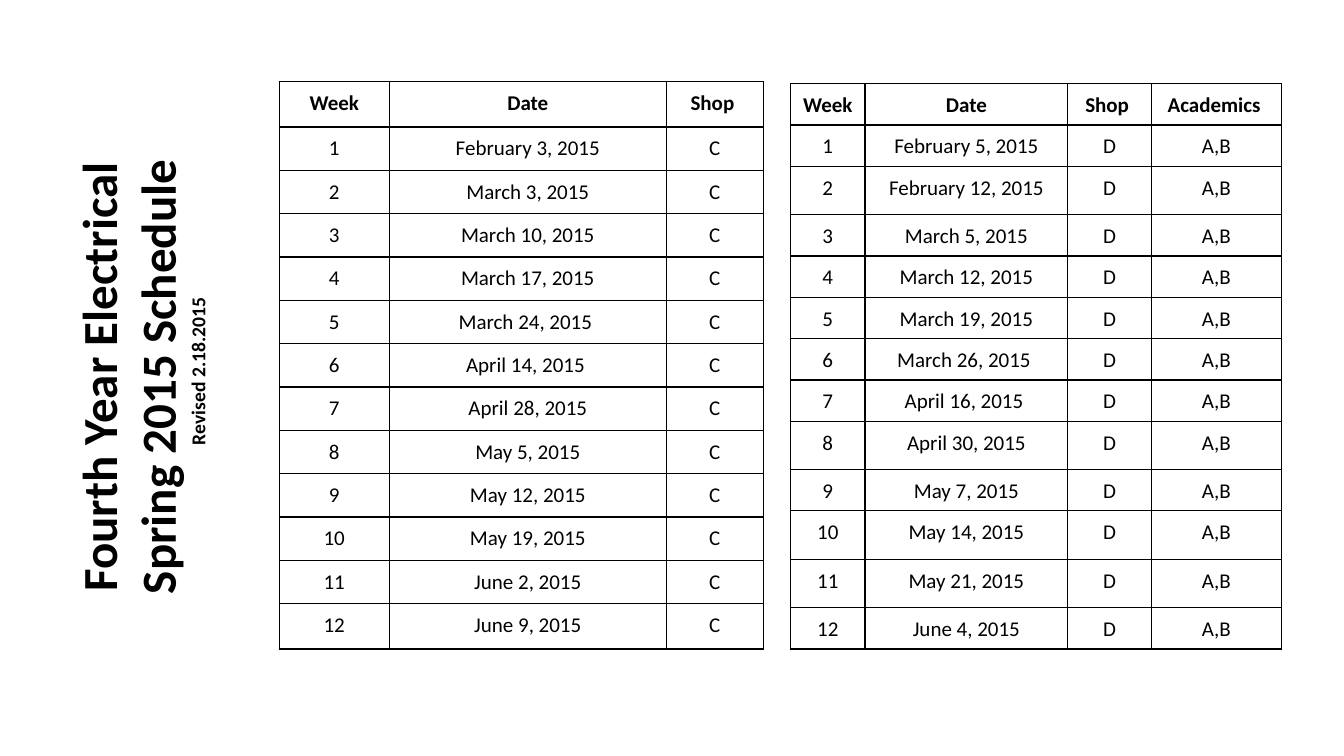
from lxml.etree import SubElement
from pptx import Presentation
from pptx.dml.color import RGBColor
from pptx.enum.text import MSO_AUTO_SIZE, PP_ALIGN
from pptx.oxml.ns import qn
from pptx.util import Inches, Pt

INK = "000000"
SIDES = ("left", "right", "top", "bottom")


def style(run, size, bold):
    form = {"name": "Calibri", "size": Pt(size), "bold": bold}
    for key, value in form.items():
        setattr(run.font, key, value)
    run.font.color.rgb = RGBColor.from_string(INK)


def border(cell):
    props = cell._tc.get_or_add_tcPr()
    for tag in ("a:lnL", "a:lnR", "a:lnT", "a:lnB"):
        line = SubElement(props, qn(tag), w=str(Pt(1)))
        fill = SubElement(line, qn("a:solidFill"))
        SubElement(fill, qn("a:srgbClr"), val=INK)


deck = Presentation()
deck.slide_width, deck.slide_height = Inches(13.33), Inches(7.5)
slide = deck.slides.add_slide(deck.slide_layouts[6])

# Schedules: the columns after the date are the same every week
plans = [
    {
        "at": (2.77, 0.81),
        "heads": ["Week", "Date", "Shop "],
        "cols": [1.09, 2.75, 0.96],
        "rows": [0.45] + [0.43] * 11 + [0.45],
        "dates": ["February 3, 2015", "March 3, 2015", "March 10, 2015",
                  "March 17, 2015", "March 24, 2015 ", "April 14, 2015 ",
                  "April 28, 2015", "May 5, 2015", "May 12, 2015",
                  "May 19, 2015", "June 2, 2015", "June 9, 2015"],
        "rest": ["C"],
    },
    {
        "at": (7.84, 0.83),
        "heads": ["Week", "Date", "Shop ", "Academics "],
        "cols": [0.74, 2.01, 0.83, 1.29],
        "rows": [0.48 if row in (2, 8, 10, 11) else 0.41 for row in range(13)],
        "dates": ["February 5, 2015", "February 12, 2015", "March 5, 2015",
                  "March 12, 2015", "March 19, 2015", "March 26, 2015 ",
                  "April 16, 2015 ", "April 30, 2015", "May 7, 2015",
                  "May 14, 2015", "May 21, 2015", "June 4, 2015"],
        "rest": ["D", "A,B"],
    },
]

for plan in plans:
    cols, rows = plan["cols"], plan["rows"]
    left, top = plan["at"]
    table = slide.shapes.add_table(
        len(rows), len(cols), Inches(left), Inches(top),
        Inches(sum(cols)), Inches(sum(rows))).table
    table.first_row = table.horz_banding = False
    for col, width in zip(table.columns, cols):
        col.width = Inches(width)
    for row, height in zip(table.rows, rows):
        row.height = Inches(height)

    # Cells
    weeks = [[str(week), date] + plan["rest"]
             for week, date in enumerate(plan["dates"], 1)]
    for r, texts in enumerate([plan["heads"]] + weeks):
        for c, text in enumerate(texts):
            cell = table.cell(r, c)
            for side in SIDES:
                setattr(cell, "margin_" + side, Inches(0.04))
            border(cell)
            cell.fill.background()
            para = cell.text_frame.paragraphs[0]
            form = {"alignment": PP_ALIGN.CENTER, "line_spacing": 1.19,
                    "space_after": Pt(6)}
            for key, value in form.items():
                setattr(para, key, value)
            run = para.add_run()
            run.text = text
            style(run, 15, r == 0)

# Title, turned to read upwards
title = slide.shapes.add_textbox(
    Inches(-2.43), Inches(2.93), Inches(7.62), Inches(1.51))
title.rotation = 270
frame = title.text_frame
frame.word_wrap = True
frame.auto_size = MSO_AUTO_SIZE.SHAPE_TO_FIT_TEXT
lines = [("Fourth Year Electrical ", 35), ("Spring 2015 Schedule ", 35),
         ("Revised 2.18.2015", 14)]
for i, (text, size) in enumerate(lines):
    para = frame.add_paragraph() if i else frame.paragraphs[0]
    para.alignment = PP_ALIGN.CENTER
    run = para.add_run()
    run.text = text
    style(run, size, True)

deck.save("out.pptx")
